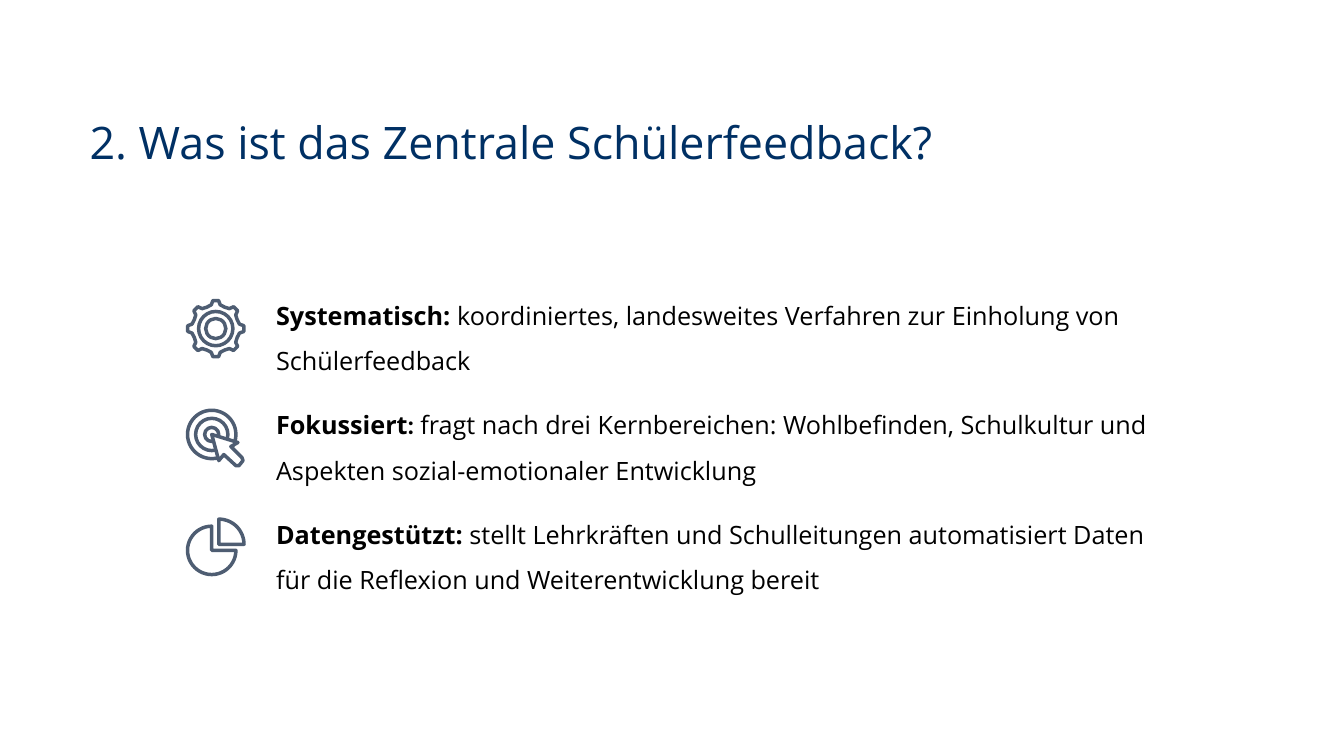
from math import cos, radians, sin

from pptx import Presentation
from pptx.dml.color import RGBColor
from pptx.enum.shapes import MSO_SHAPE as Shape
from pptx.enum.text import MSO_ANCHOR as Anchor, MSO_AUTO_SIZE as AutoSize
from pptx.oxml.ns import qn
from pptx.util import Inches, Pt

NAVY = RGBColor(0x00, 0x30, 0x64)
BLACK = RGBColor(0x00, 0x00, 0x00)
SLATE = RGBColor(0x4E, 0x5D, 0x72)
WHITE = RGBColor(0xFF, 0xFF, 0xFF)
FONT = "Open Sans"

ROW_TOP = 2.78
ROW_PITCH = 1.085


def add_text(page, runs, at, size=18, color=BLACK, spacing=1.5, anchor=Anchor.TOP):
    """Add one paragraph; runs holds (text, bold, font) triples."""
    box = page.shapes.add_textbox(*map(Inches, at))
    frame = box.text_frame
    frame.word_wrap = True
    frame.auto_size = AutoSize.SHAPE_TO_FIT_TEXT
    frame.vertical_anchor = anchor
    para = frame.paragraphs[0]
    para.line_spacing = spacing
    for text, bold, font in runs:
        span = para.add_run()
        span.text = text
        span.font.name = font
        span.font.size = Pt(size)
        span.font.bold = bold
        span.font.color.rgb = color


def style_outline(shape, fill=None):
    shape.shadow.inherit = False
    if fill is None:
        shape.fill.background()
    else:
        shape.fill.solid()
        shape.fill.fore_color.rgb = fill
    shape.line.color.rgb = SLATE
    shape.line.width = Pt(2.5)
    line = shape.line._get_or_add_ln()
    line.append(line.makeelement(qn("a:round"), {}))


def add_round(shapes, kind, x, y, radius):
    """Add an outlined preset centred on x, y."""
    shape = shapes.add_shape(kind, Inches(x - radius), Inches(y - radius),
                             Inches(2 * radius), Inches(2 * radius))
    style_outline(shape)


def add_outline(shapes, points, fill=None):
    corners = [(Inches(x), Inches(y)) for x, y in points]
    builder = shapes.build_freeform(*corners[0], scale=1.0)
    builder.add_line_segments(corners[1:], close=True)
    style_outline(builder.convert_to_shape(), fill)


def polar(x, y, radius, degrees):
    return x + radius * cos(radians(degrees)), y + radius * sin(radians(degrees))


def draw_gear(shapes):
    x, y = 2.14, 3.26
    tooth = [(-10.6, 0.24), (-5.8, 0.28), (5.8, 0.28), (10.6, 0.24), (22.5, 0.23)]
    add_outline(shapes, [polar(x, y, radius, 45 * step + turn)
                         for step in range(8) for turn, radius in tooth])
    for radius in (0.17, 0.1):
        add_round(shapes, Shape.OVAL, x, y, radius)


def draw_target(shapes):
    for radius in (0.24, 0.16, 0.07):
        add_round(shapes, Shape.OVAL, 2.1, 4.31, radius)
    cursor = [(2.1, 4.31), (2.36, 4.39), (2.29, 4.43), (2.4, 4.54), (2.41, 4.57),
              (2.37, 4.62), (2.34, 4.62), (2.22, 4.51), (2.17, 4.57)]
    add_outline(shapes, cursor, WHITE)


def draw_pie(shapes):
    add_round(shapes, Shape.PIE, 2.1, 5.46, 0.24)
    corner = (2.17, 5.4)
    arc = [polar(*corner, 0.25, degrees) for degrees in range(-90, 1, 5)]
    add_outline(shapes, [corner] + arc)


FEATURES = [
    (draw_gear, [
        ("Systematisch: ", True, FONT),
        ("koordiniertes, landesweites Verfahren zur Einholung von Schülerfeedback",
         False, FONT)]),
    (draw_target, [
        ("Fokussiert", True, FONT),
        (": ", True, "Lato"),
        ("fragt nach drei Kernbereichen: Wohlbefinden, Schulkultur und "
         "Aspekten sozial-emotionaler Entwicklung", False, FONT)]),
    (draw_pie, [
        ("Datengestützt: ", True, FONT),
        ("stellt Lehrkräften und Schulleitungen automatisiert Daten "
         "für die Reflexion und Weiterentwicklung bereit", False, FONT)]),
]


def main():
    deck = Presentation()
    deck.slide_width, deck.slide_height = Inches(13.33), Inches(7.5)
    page = deck.slides.add_slide(deck.slide_layouts[6])
    add_text(page, [("2. Was ist das Zentrale Schülerfeedback?", False, FONT)],
             (0.79, 1.1, 11.71, 0.62), size=32, color=NAVY, spacing=Pt(37),
             anchor=Anchor.MIDDLE)
    for row, (draw_icon, runs) in enumerate(FEATURES):
        draw_icon(page.shapes.add_group_shape().shapes)
        add_text(page, runs, (2.64, ROW_TOP + row * ROW_PITCH, 8.86, 0.96))
    deck.save("out.pptx")


if __name__ == "__main__":
    main()
